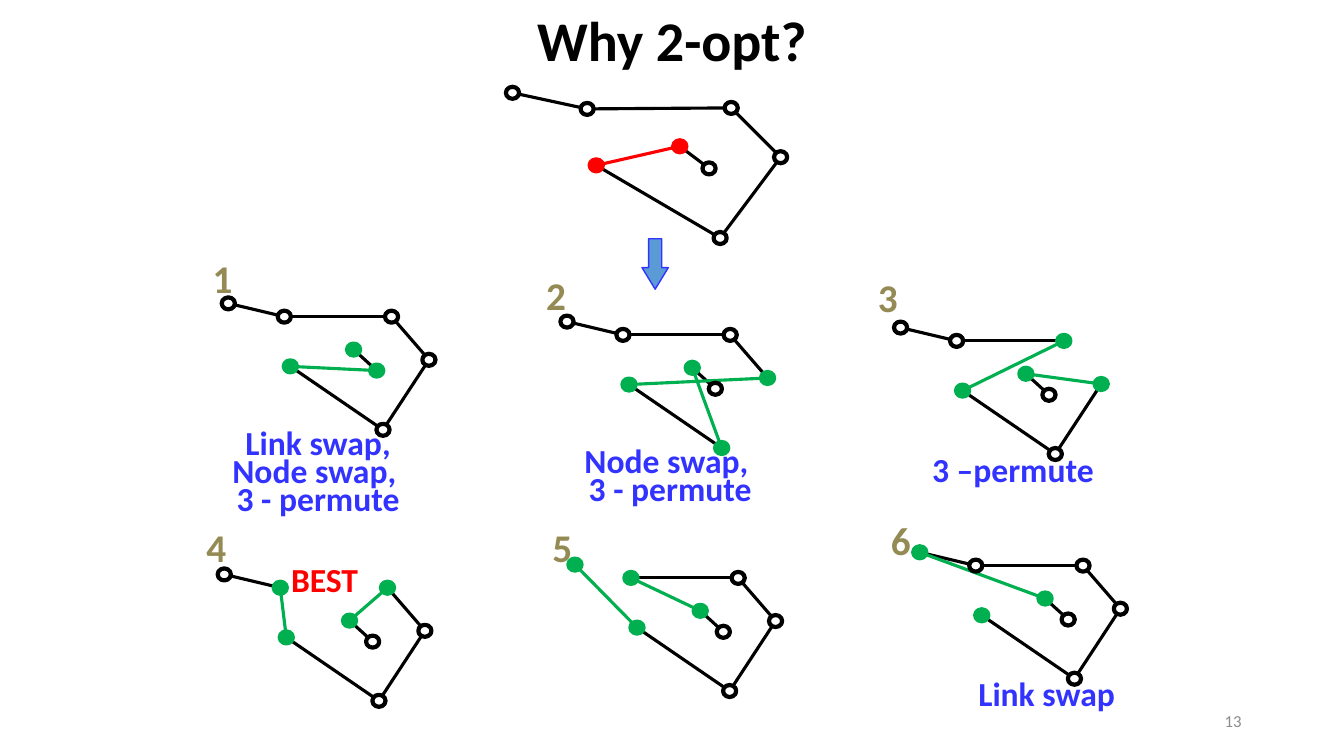
from pptx import Presentation
from pptx.util import Pt
from pptx.dml.color import RGBColor
from pptx.enum.shapes import MSO_CONNECTOR as Link, MSO_SHAPE as Geo
from pptx.enum.text import MSO_ANCHOR as Anchor, PP_ALIGN as Align
from lxml.etree import SubElement
from pptx.oxml.ns import qn

BLACK = RGBColor(0, 0, 0)
WHITE = RGBColor(255, 255, 255)
RED = RGBColor(255, 0, 0)
GREEN = RGBColor(0x00, 0xB0, 0x50)
BLUE = RGBColor(0x33, 0x33, 0xFF)
SKY = RGBColor(0x5B, 0x9B, 0xD5)
TAN = RGBColor(0x94, 0x8A, 0x54)
GRAY = RGBColor(0x8C, 0x8C, 0x8C)
FONT = "Calibri"

# Node offsets from node a
LARGE = dict(a=(0, 0), b=(53.3, 11.5), c=(156.2, 10.8), d=(191.5, 46),
             e=(148.3, 103.7), f=(59.8, 51.8), g=(119.5, 38.2), h=(140.4, 54))
SMALL = dict(a=(0, 0), b=(40, 9.5), c=(116.6, 9.5), d=(143.3, 40.3),
             e=(110.5, 90.3), f=(44.3, 45), g=(89.5, 33), h=(106, 48))
NODE = (9.4, 8.6)

# Corner of node a, offsets, plain edges, changed edges, changed nodes, accent
TOURS = [
    ((361.4, 62), LARGE, "ab bc cd de ef gh", "fg", "fg", RED),
    ((158.4, 212.4), SMALL, "ab bc cd de ef gh", "fh", "fgh", GREEN),
    ((400.3, 225.4), SMALL, "ab bc cd ef gh", "df eg", "defg", GREEN),
    ((638.6, 229.7), SMALL, "ab bc de ef gh", "cf dg", "cdfg", GREEN),
    ((155.5, 406), SMALL, "ab cd de ef gh", "bf cg", "bcfg", GREEN),
    ((406, 399), SMALL, "bc cd de ef gh", "bg af", "abfg", GREEN),
    ((652.3, 390.2), SMALL, "ab bc cd de ef gh", "ag", "afg", GREEN),
]

# Left and top of the numbers 1 to 6
SPOTS = [(144.7, 177.8), (383, 190), (620, 191.5),
         (140.4, 370), (387.4, 370), (629.3, 365)]

# Lines, box, line spacing, colour
NOTES = [
    (["Link swap, Node swap, ", "3 - permute"], (144.7, 306.7, 165, 58.3), 20, BLUE),
    (["Node swap, ", "3 - permute"], (396.7, 319.7, 164, 36.7), 20, BLUE),
    (["3 –permute"], (649.4, 320.4, 148.3, 38), 25.6, BLUE),
    (["BEST"], (190.8, 399, 82, 32.4), 25.2, RED),
    (["Link swap"], (685.4, 480.2, 124.6, 29.5), 25.6, BLUE),
]

deck = Presentation()
deck.slide_width, deck.slide_height = Pt(960), Pt(540)
slide = deck.slides.add_slide(deck.slide_layouts[5])


def write(frame, lines, size, tint, bold=True, align=Align.CENTER, gap=None):
    frame.word_wrap = True
    for i, line in enumerate(lines):
        para = frame.paragraphs[0] if i == 0 else frame.add_paragraph()
        para.alignment = align
        if gap:
            para.line_spacing = gap
        run = para.add_run()
        run.text = line
        font = run.font
        font.name, font.size, font.bold = FONT, Pt(size), bold
        font.color.rgb = tint


def label(box, *args, **opts):
    frame = slide.shapes.add_textbox(*map(Pt, box)).text_frame
    write(frame, *args, **opts)
    return frame


def paint(shape, fill, line, width):
    shape.shadow.inherit = False
    shape.fill.solid()
    shape.fill.fore_color.rgb = fill
    shape.line.color.rgb = line
    shape.line.width = Pt(width)


def draw(start, spots, plain, swaps, hot, tint):
    group = slide.shapes.add_group_shape().shapes
    place = {k: (start[0] + x, start[1] + y) for k, (x, y) in spots.items()}
    mid = {k: (x + NODE[0] / 2, y + NODE[1] / 2) for k, (x, y) in place.items()}
    # Edges run between node centres, beneath the nodes
    for edges, shade in ((plain, BLACK), (swaps, tint)):
        for p, q in edges.split():
            edge = group.add_connector(Link.STRAIGHT, *map(Pt, mid[p] + mid[q]))
            edge.line.color.rgb = shade
            edge.line.width = Pt(2.25)
            SubElement(edge._element.spPr, qn("a:effectLst"))
    for key, spot in place.items():
        node = group.add_shape(Geo.OVAL, *map(Pt, spot + NODE))
        if key in hot:
            paint(node, tint, tint, 3)
        else:
            paint(node, WHITE, BLACK, 3)


# Title
title = slide.shapes.title
title.left, title.top, title.width, title.height = map(Pt, (0, 0, 960, 62))
title.text_frame.vertical_anchor = Anchor.MIDDLE
write(title.text_frame, ["Why 2-opt?"], 40, BLACK, gap=0.9)

# Captions and numbers
for lines, box, gap, tint in NOTES:
    label(box, lines, 24, tint, gap=Pt(gap))
for num, spot in enumerate(SPOTS, 1):
    label(spot + (26, 38), [str(num)], 28, TAN)

# Tours
for tour in TOURS:
    draw(*tour)

# Arrow from the start tour to its neighbours
arrow = slide.shapes.add_shape(Geo.DOWN_ARROW, *map(Pt, (458.6, 170.6, 18.8, 36)))
arrow.adjustments[0], arrow.adjustments[1] = 0.5, 0.82
paint(arrow, SKY, BLUE, 1)

# Page number
page = label((678, 500.5, 216, 28.8), ["13"], 12, GRAY, bold=False, align=Align.RIGHT)
page.vertical_anchor = Anchor.MIDDLE

deck.save("out.pptx")
